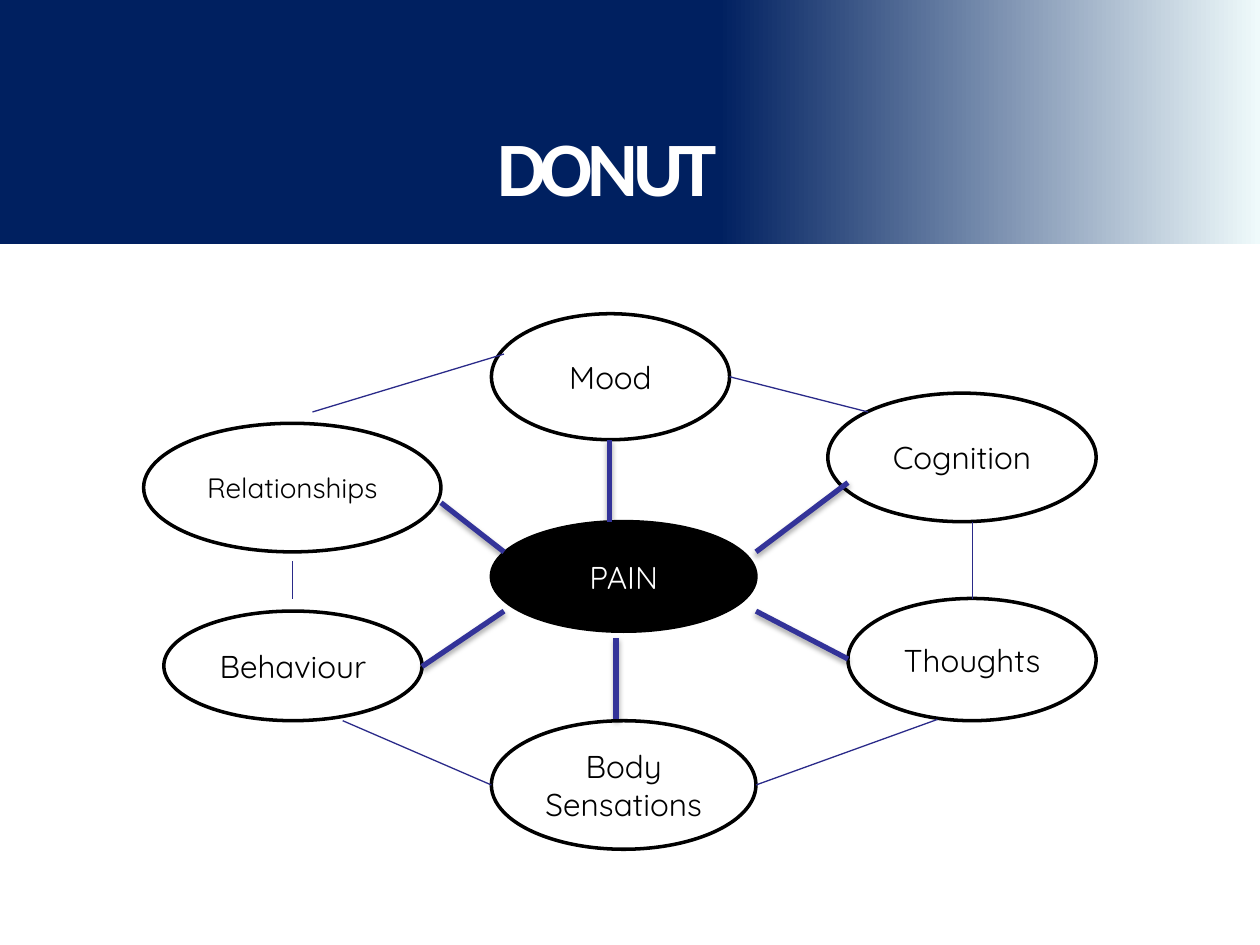
import pptx
import pptx.util
import pptx.dml.color
import pptx.enum.shapes
import pptx.enum.text
import pptx.oxml
import pptx.oxml.ns
from pptx.util import Inches

COLOURS = {"navy": "002060", "mist": "EFFAFB", "white": "FFFFFF",
           "black": "000000", "spoke": "333399", "link": "2A2A89"}

FACTORS = [
    ("PAIN", 2.76, 1.65, 2.1, 0.87, 18, "black", "white"),
    ("Mood", 2.76, 0, 1.89, 1, 18, "white", "black"),
    ("Cognition", 5.43, 0.63, 2.13, 1.02, 18, "white", "black"),
    ("Thoughts", 5.59, 2.26, 1.97, 0.97, 18, "white", "black"),
    ("Body Sensations", 2.76, 3.23, 2.1, 1.02, 18, "white", "black"),
    ("Relationships", 0, 0.87, 2.36, 1.02, 16, "white", "black"),
    ("Behaviour", 0.16, 2.36, 2.05, 0.87, 18, "white", "black"),
]
SPOKES = [
    (3.75, 3.22, 3.75, 2.57), (3.7, 1.65, 3.7, 1), (2.36, 1.5, 2.86, 1.89),
    (5.59, 1.34, 4.86, 1.89), (2.21, 2.8, 2.86, 2.36), (4.86, 2.36, 5.59, 2.74),
]
LINKS = [
    (4.65, 0.5, 5.75, 0.78), (6.58, 1.65, 6.58, 2.26), (6.3, 3.22, 4.86, 3.74),
    (2.76, 3.74, 1.58, 3.23), (1.18, 2.26, 1.18, 1.96), (1.34, 0.78, 2.86, 0.32),
]
SHADOW = (
    '<a:outerShdw blurRad="39370" dist="22860" dir="5400000" rotWithShape="0">'
    f'<a:srgbClr val="{COLOURS["black"]}"><a:alpha val="35000"/></a:srgbClr>'
    '</a:outerShdw>'
)


def colour(name):
    """Return the named colour."""
    return pptx.dml.color.RGBColor.from_string(COLOURS[name])


def add_span(para, text, font, size, tint):
    """Add a styled run to a paragraph."""
    span = para.add_run()
    span.text = text
    span.font.name = font
    span.font.size = pptx.util.Pt(size)
    span.font.color.rgb = colour(tint)
    return span


def add_header(page, left, top, width, height):
    """Draw the gradient band and its title."""
    band = page.shapes.add_shape(
        pptx.enum.shapes.MSO_SHAPE.RECTANGLE,
        Inches(left), Inches(top), Inches(width), Inches(height))
    band.shadow.inherit = False
    band.line.fill.background()
    band.fill.gradient()
    band.fill.gradient_angle = 0
    for stop, position, tint in zip(band.fill.gradient_stops, (0.57, 1), ("navy", "mist")):
        stop.position = position
        stop.color.rgb = colour(tint)

    title = page.shapes.add_textbox(
        Inches(left + 0.4), Inches(top + 0.69), Inches(9.09), Inches(height - 0.69))
    frame = title.text_frame
    frame.word_wrap = True
    frame.vertical_anchor = pptx.enum.text.MSO_ANCHOR.MIDDLE
    frame.margin_left = Inches(3.55)
    span = add_span(frame.paragraphs[0], "DONUT", "Calibri", 44, "white")
    span.font.bold = True
    span.font._element.set("spc", "-300")


def add_factor(page, left, top, width, height, text, size, fill, tint):
    """Draw one labelled ellipse."""
    oval = page.shapes.add_shape(
        pptx.enum.shapes.MSO_SHAPE.OVAL,
        Inches(left), Inches(top), Inches(width), Inches(height))
    oval.shadow.inherit = False
    oval.fill.solid()
    oval.fill.fore_color.rgb = colour(fill)
    oval.line.color.rgb = colour("black")
    oval.line.width = pptx.util.Pt(2)
    frame = oval.text_frame
    frame.word_wrap = True
    frame.vertical_anchor = pptx.enum.text.MSO_ANCHOR.MIDDLE
    para = frame.paragraphs[0]
    para.alignment = pptx.enum.text.PP_ALIGN.CENTER
    add_span(para, text, "Quicksand", size, tint)


def add_lines(page, left, top, ends, tint, weight, effect=""):
    """Draw a group of straight lines with one style."""
    for x1, y1, x2, y2 in ends:
        line = page.shapes.add_connector(
            pptx.enum.shapes.MSO_CONNECTOR.STRAIGHT,
            Inches(left + x1), Inches(top + y1), Inches(left + x2), Inches(top + y2))
        line.line.color.rgb = colour(tint)
        line.line.width = pptx.util.Pt(weight)
        line._element.spPr.append(pptx.oxml.parse_xml(
            f'<a:effectLst {pptx.oxml.ns.nsdecls("a")}>{effect}</a:effectLst>'))


def add_wheel(page, left, top):
    """Draw the ring of factors around the centre."""
    for text, x, y, width, height, size, fill, tint in FACTORS:
        add_factor(page, left + x, top + y, width, height, text, size, fill, tint)
    add_lines(page, left, top, SPOKES, "spoke", 3, SHADOW)
    add_lines(page, left, top, LINKS, "link", 0.75)


def main():
    """Build and save the deck."""
    deck = pptx.Presentation()
    deck.slide_width = Inches(10)
    deck.slide_height = Inches(7.5)
    page = deck.slides.add_slide(deck.slide_layouts[6])
    add_header(page, 0, 0, 10, 1.94)
    add_wheel(page, 1.14, 2.49)
    deck.save("out.pptx")


if __name__ == "__main__":
    main()
